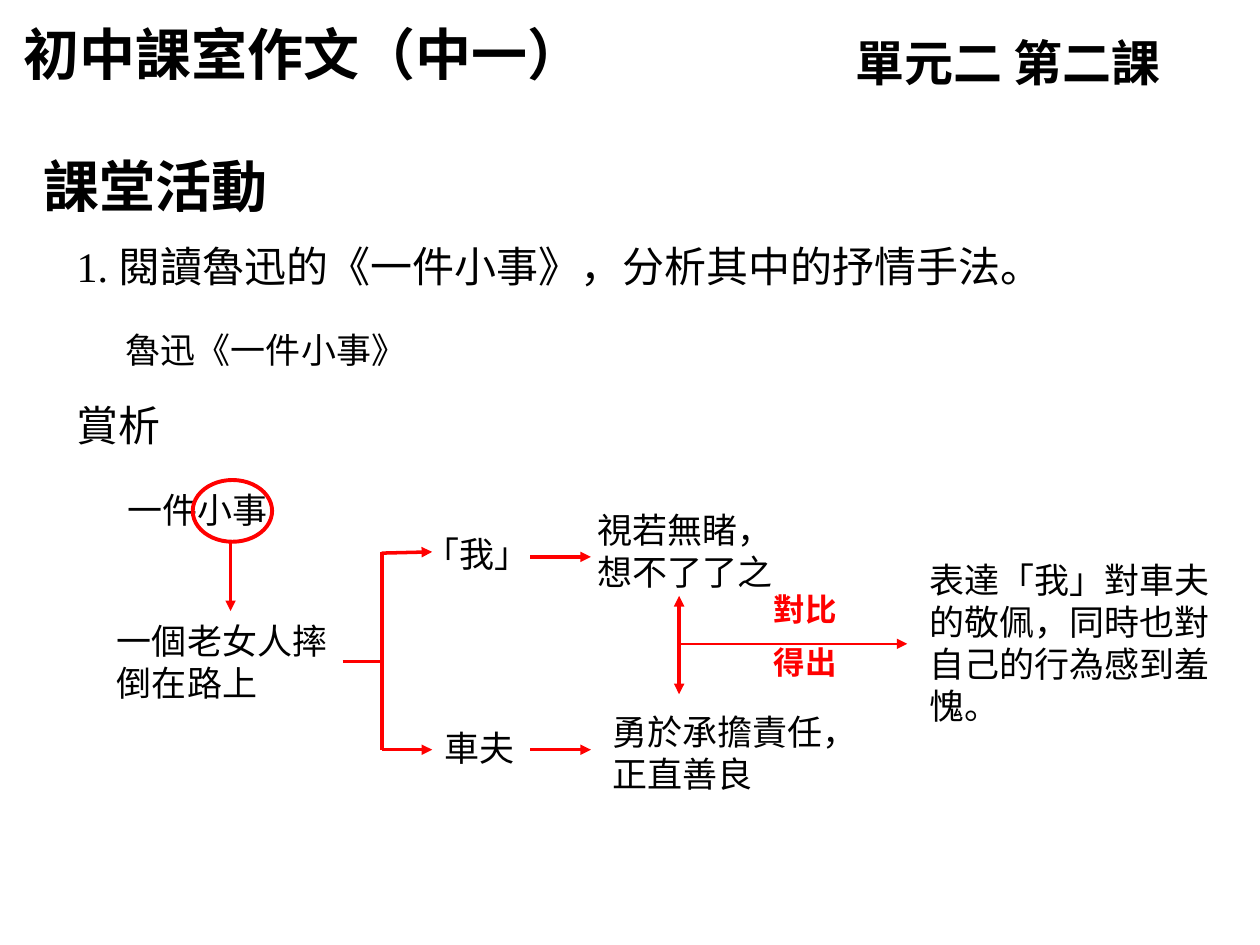
import pptx
import pptx.util
import pptx.dml.color
import pptx.enum.shapes
import pptx.enum.text
import pptx.oxml.ns
import lxml.etree

Inches = pptx.util.Inches
Pt = pptx.util.Pt
RGBColor = pptx.dml.color.RGBColor
ALIGN = pptx.enum.text.PP_ALIGN
BLACK = RGBColor(0, 0, 0)
RED = RGBColor(255, 0, 0)
SERIF, SANS, HEAD = "Times New Roman", "Arial", "Karla"

TITLES = [
    ("初中課室作文（中一）", (0.09, 0.11, 5.22, 0.63), dict(size=32, font=HEAD, bold=True)),
    ("單元二 第二課", (6.69, 0.21, 3.35, 0.57), dict(size=28, font=HEAD, bold=True)),
    ("課堂活動", (0.25, 1.15, 5.22, 0.63), dict(size=32, font=SANS, bold=True)),
    ("1. 閱讀魯迅的《一件小事》，分析其中的抒情手法。", (0.51, 1.86, 9.21, 0.5), dict(size=24)),
    ("魯迅《一件小事》", (0.9, 2.56, 3.15, 0.43), {}),
    ("賞析", (0.51, 3.12, 0.94, 0.5), dict(size=24)),
]
NOTES = [
    ("一件小事", (0.43, 3.83, 2.28, 0.43), dict(font=SANS, align=ALIGN.CENTER)),
    ("一個老女人摔倒在路上", (0.83, 4.87, 1.89, 0.77), {}),
    ("「我」", (3.27, 4.18, 3.15, 0.43), {}),
    ("車夫", (3.43, 5.72, 0.87, 0.43), {}),
    ("視若無睹，想不了了之", (4.61, 3.99, 1.65, 0.77), dict(font=SANS, align=ALIGN.CENTER)),
    ("勇於承擔責任，正直善良", (4.76, 5.59, 2.05, 0.77), dict(font=SANS)),
    ("表達「我」對車夫的敬佩，同時也對自己的行為感到羞愧。", (7.28, 4.38, 2.44, 1.43), {}),
    ("對比\n得出", (5.84, 4.63, 1.1, 0.85),
     dict(size=18, font=SANS, bold=True, color=RED, align=ALIGN.CENTER)),
]
RING = (1.53, 3.81, 0.63, 0.49)
ARROWS = [
    ((1.83, 4.3, 1.83, 4.85), 1.5, ["tailEnd"]),
    ((4.21, 4.42, 4.69, 4.42), 2, ["tailEnd"]),
    ((4.21, 5.95, 4.69, 5.95), 2, ["tailEnd"]),
    ((5.39, 4.73, 5.39, 5.51), 2, ["headEnd", "tailEnd"]),
    ((5.39, 5.11, 7.2, 5.11), 1.5, ["tailEnd"]),
]
FORK = [
    ((2.72, 5.25, 3.03, 5.25), 2, []),
    ((3.03, 4.38, 3.03, 5.95), 2, []),
    ((3.03, 4.39, 3.43, 4.38), 2, ["tailEnd"]),
    ((3.03, 5.95, 3.43, 5.95), 2, ["tailEnd"]),
]


def write(text, place, size=20, font=SERIF, bold=False, color=BLACK, align=ALIGN.LEFT):
    frame = slide.shapes.add_textbox(*map(Inches, place)).text_frame
    frame.word_wrap = True
    frame.text = text
    for row, para in enumerate(frame.paragraphs):
        para.alignment = align
        if row:
            para.space_before = Pt(size / 2)
        style = para.runs[0].font
        style.size = Pt(size)
        style.name = font
        style.bold = bold
        style.color.rgb = color


def link(shapes, ends, width, tips):
    wire = shapes.add_connector(pptx.enum.shapes.MSO_CONNECTOR.STRAIGHT, *map(Inches, ends))
    wire.line.color.rgb = RED
    wire.line.width = Pt(width)
    props = wire._element.spPr
    line = props.find(pptx.oxml.ns.qn("a:ln"))
    for tip in tips:
        lxml.etree.SubElement(line, pptx.oxml.ns.qn("a:" + tip), type="triangle")
    lxml.etree.SubElement(props, pptx.oxml.ns.qn("a:effectLst"))


deck = pptx.Presentation()
deck.slide_width, deck.slide_height = Inches(10), Inches(7.5)
slide = deck.slides.add_slide(deck.slide_layouts[6])

for text, place, form in TITLES + NOTES:
    write(text, place, **form)

ring = slide.shapes.add_shape(pptx.enum.shapes.MSO_SHAPE.OVAL, *map(Inches, RING))
ring.shadow.inherit = False
ring.fill.background()
ring.line.color.rgb = RED
ring.line.width = Pt(2.25)

for arrow in ARROWS:
    link(slide.shapes, *arrow)
fork = slide.shapes.add_group_shape()
for branch in FORK:
    link(fork.shapes, *branch)

deck.save("out.pptx")
